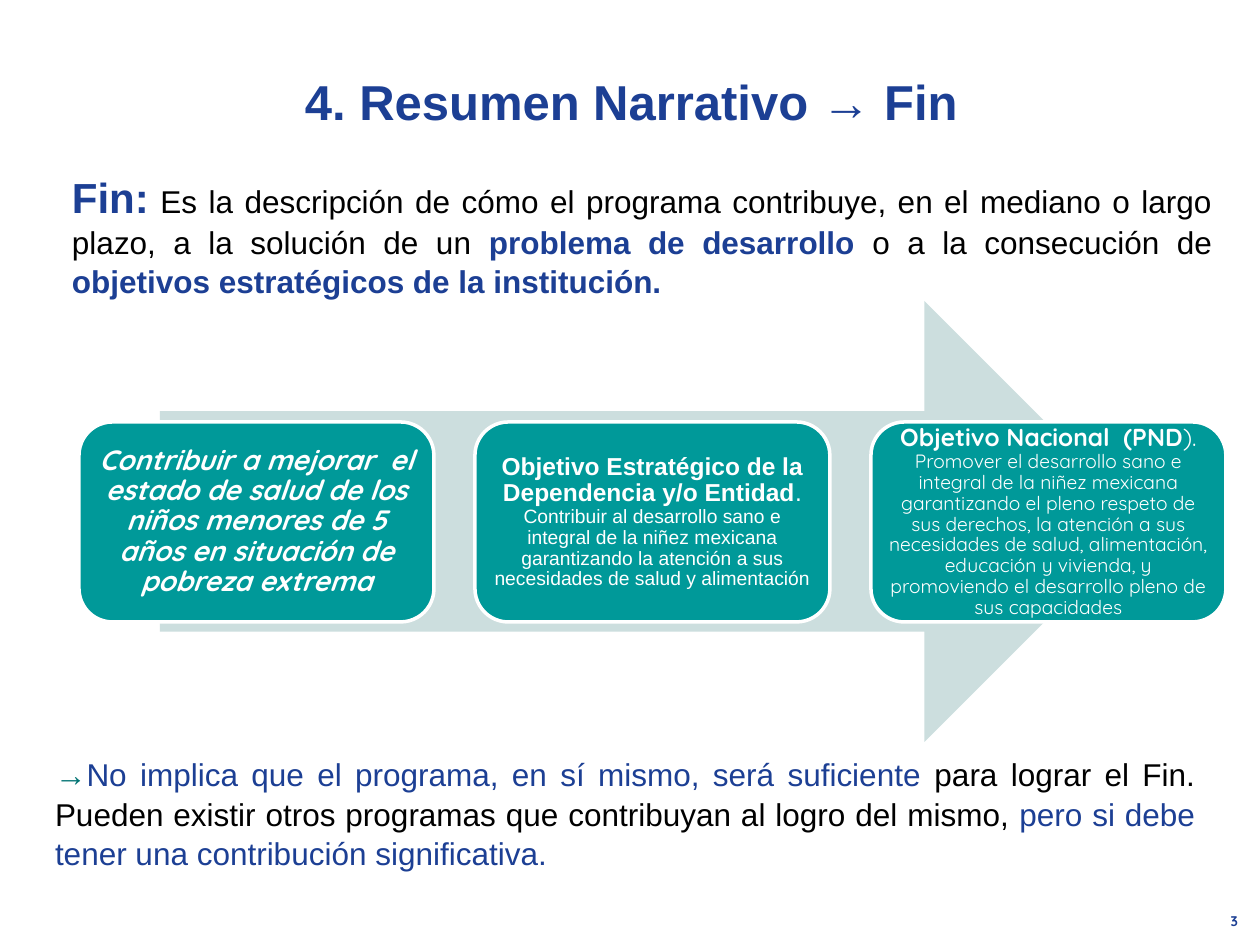
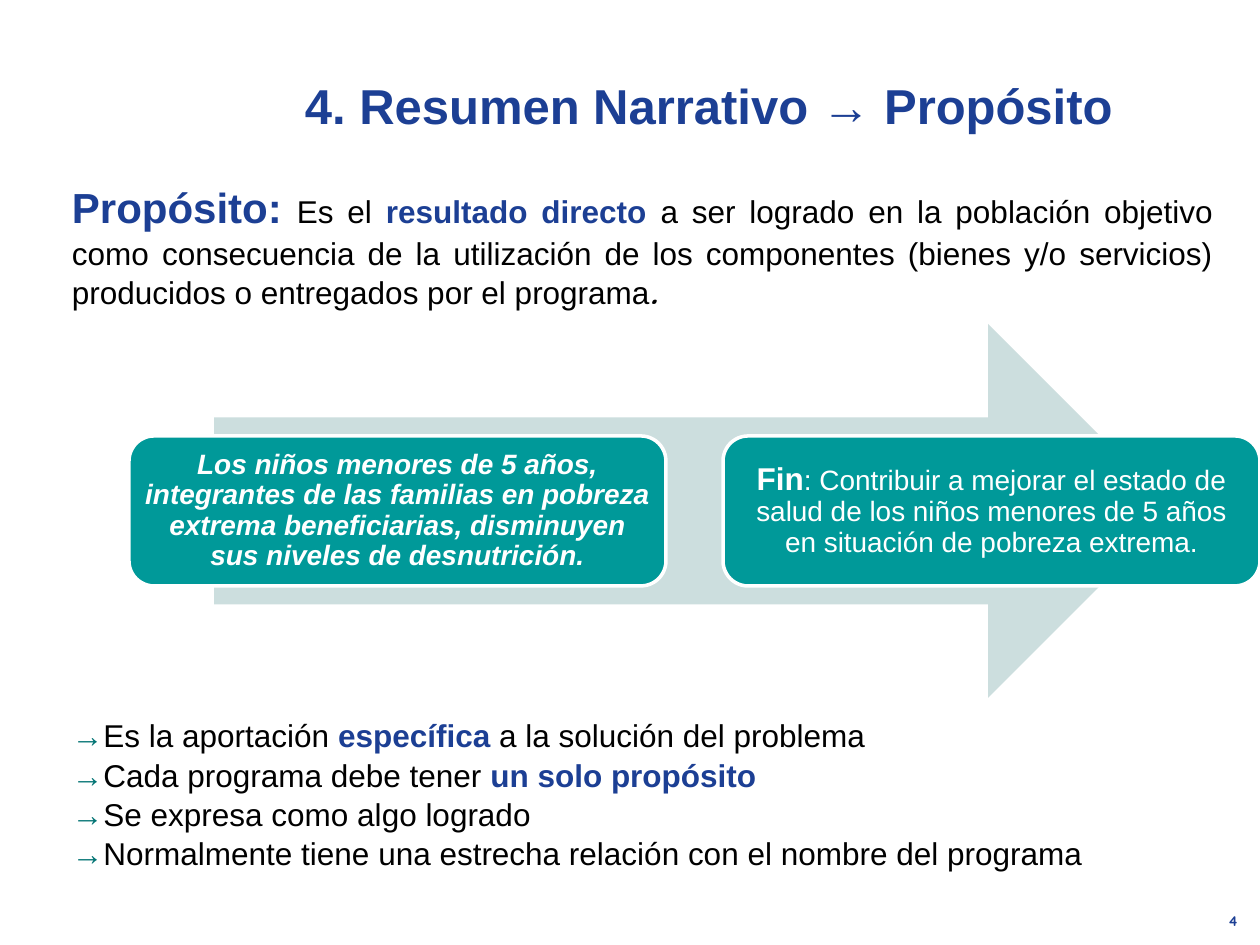
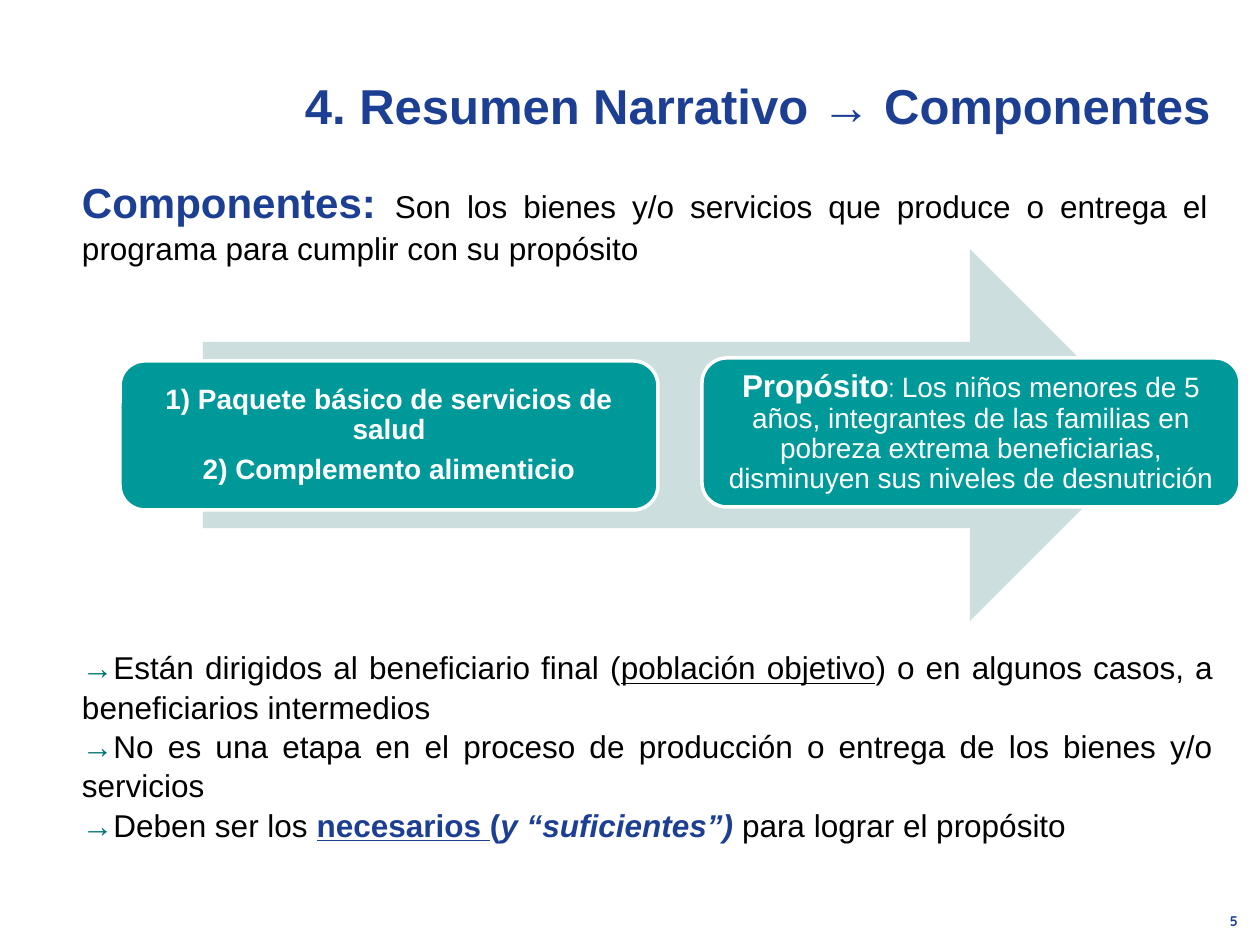
from lxml.etree import SubElement
from pptx import Presentation
from pptx.dml.color import RGBColor
from pptx.enum.shapes import MSO_SHAPE as Shape
from pptx.enum.text import MSO_ANCHOR as Anchor, MSO_AUTO_SIZE as AutoSize, PP_ALIGN as Align
from pptx.oxml.ns import qn
from pptx.util import Emu, Pt

PX = 914400 / 126


def px(*lengths):
    return [Emu(round(length * PX)) for length in lengths]


def write(frame, paragraphs, base, layout, margins):
    frame.word_wrap = True
    frame.auto_size = AutoSize.NONE
    frame.vertical_anchor = layout["anchor"]
    for side, margin in zip(("left", "top", "right", "bottom"), px(*margins)):
        setattr(frame, "margin_" + side, margin)
    for index, runs in enumerate(paragraphs):
        paragraph = frame.add_paragraph() if index else frame.paragraphs[0]
        properties = paragraph._p.get_or_add_pPr()
        properties.set("marL", "0")
        properties.set("indent", "0")
        SubElement(properties, qn("a:buNone"))
        for key, value in layout["paragraph"].items():
            setattr(paragraph, key, value)
        for text, changes in runs:
            style = {**base, **changes}
            if text == "\n":
                paragraph.add_line_break()
                SubElement(paragraph._p[-1], qn("a:rPr"), sz=str(style["size"] * 100))
                continue
            run = paragraph.add_run()
            run.text = text
            run.font.color.rgb = RGBColor.from_string(style["color"])
            run.font.size = Pt(style["size"])
            for key in ("name", "bold", "italic", "underline"):
                setattr(run.font, key, style[key])


BLUE, TEAL, GREEN, PALE = "1C3F94", "009999", "007373", "CCDEDE"
BLACK, WHITE = "000000", "FFFFFF"

PLAIN = {"name": "Arial", "size": 18, "color": BLACK, "bold": False, "italic": False, "underline": False}
HEADING = {**PLAIN, "size": 28, "color": BLUE, "bold": True}
CARD = {**PLAIN, "size": 16, "color": WHITE}
NUMBER = {**PLAIN, "name": "Quicksand", "size": 8, "color": BLUE, "bold": True}

TERM = {"size": 24, "color": BLUE, "bold": True}
KEY = {"color": BLUE, "bold": True}
TONE = {"color": BLUE}
BOLD = {"bold": True}
ROUND = {"name": "Quicksand"}
SMALL = {"size": 11}
LABEL = {"size": 14, "bold": True}
LEAD = {"size": 18, "bold": True}
BULLET = ("→", {"color": GREEN})

TITLE_LAYOUT = {"anchor": Anchor.TOP, "paragraph": {"alignment": Align.LEFT, "space_before": Pt(0)}}
PROSE_LAYOUT = {"anchor": Anchor.TOP, "paragraph": {
    "alignment": Align.JUSTIFY, "line_spacing": 1.04, "space_before": Pt(0)}}
CARD_LAYOUT = {"anchor": Anchor.MIDDLE, "paragraph": {
    "alignment": Align.CENTER, "line_spacing": 0.9, "space_before": Pt(0), "space_after": Pt(6)}}
NUMBER_LAYOUT = {"anchor": Anchor.TOP, "paragraph": {"alignment": Align.RIGHT}}

levels = [
    {
        "name": "Fin",
        "title_top": 60,
        "definition_box": (59, 159, 1166, 144),
        "definition": [
            ("Fin:", TERM),
            (" ", BOLD),
            ("Es la descripción de cómo el programa contribuye, en el mediano o largo plazo, "
             "a la solución de un ", {}),
            ("problema de desarrollo ", KEY),
            ("o a la consecución de ", {}),
            ("objetivos estratégicos de la institución.", KEY),
        ],
        "arrow_box": (160, 301, 985, 441),
        "card_size": (355, 200),
        "card_left": 79,
        "card_step": 396,
        "card_tops": (422, 422, 422),
        "cards": [
            [[("Contribuir a mejorar  el estado de salud de los niños menores de 5 años "
               "en situación de pobreza extrema", {**ROUND, "bold": True, "italic": True})]],
            [[("Objetivo Estratégico de la Dependencia y/o Entidad", LABEL),
              (". ", {"size": 14}),
              ("Contribuir al desarrollo sano e integral de la niñez mexicana garantizando "
               "la atención a sus necesidades de salud y alimentación", SMALL)]],
            [[("Objetivo Nacional  (PND", {**ROUND, **LABEL}),
              (").", {**ROUND, "size": 14}),
              ("\n", {"size": 14}),
              ("Promover el desarrollo sano e integral de la niñez mexicana garantizando el pleno "
               "respeto de sus derechos, la atención a sus necesidades de salud, alimentación, "
               "educación y vivienda, y promoviendo el desarrollo pleno de sus capacidades",
               {**ROUND, **SMALL})]],
        ],
        "notes_box": (42, 745, 1166, 127),
        "remarks": [
            [BULLET,
             ("No implica que el programa, en sí mismo, será suficiente ", TONE),
             ("para lograr el Fin. Pueden existir otros programas que contribuyan al logro "
              "del mismo, ", {}),
             ("pero si debe tener una contribución significativa.", TONE)],
        ],
    },
    {
        "name": "Propósito",
        "title_top": 64,
        "definition_box": (59, 170, 1167, 140),
        "definition": [
            ("Propósito:", TERM),
            (" ", {"size": 20}),
            ("Es el ", {}),
            ("resultado directo ", KEY),
            ("a ser logrado en la población objetivo como consecuencia de la utilización de los "
             "componentes (bienes y/o servicios) producidos o entregados por el programa", {}),
            (".", {**ROUND, "bold": True, "italic": True}),
        ],
        "arrow_box": (214, 324, 961, 374),
        "card_size": (537, 150),
        "card_left": 129,
        "card_step": 594,
        "card_tops": (436, 436),
        "cards": [
            [[("Los niños menores de 5 años, integrantes de las familias en pobreza extrema "
               "beneficiarias, disminuyen sus niveles de desnutrición.",
               {"bold": True, "italic": True})]],
            [[("Fin", LEAD),
              (": Contribuir a mejorar el estado de salud de los niños menores de 5 años "
               "en situación de pobreza extrema.", {})]],
        ],
        "notes_box": (59, 706, 1167, 165),
        "remarks": [
            [BULLET, ("Es la aportación ", {}), ("específica", KEY),
             (" a la solución del problema", {})],
            [BULLET, ("Cada programa debe tener ", {}), ("un solo propósito", KEY)],
            [BULLET, ("Se expresa como algo logrado", {})],
            [BULLET, ("Normalmente tiene una estrecha relación con el nombre del programa", {})],
        ],
    },
    {
        "name": "Componentes",
        "title_top": 64,
        "definition_box": (69, 165, 1152, 129),
        "definition": [
            ("Componentes: ", TERM),
            ("Son los bienes y/o servicios que produce o entrega el programa para cumplir "
             "con su propósito ", {}),
        ],
        "arrow_box": (203, 249, 953, 372),
        "card_size": (538, 149),
        "card_left": 120,
        "card_step": 582,
        "card_tops": (361, 358),
        "cards": [
            [[("1) Paquete básico de servicios de salud", BOLD)],
             [("2) Complemento alimenticio", BOLD)]],
            [[("Propósito", LEAD),
              (": ", ROUND),
              ("Los niños menores de 5 años, integrantes de las familias en pobreza extrema "
               "beneficiarias, disminuyen sus niveles de desnutrición", {})]],
        ],
        "notes_box": (69, 638, 1157, 242),
        "remarks": [
            [BULLET, ("Están dirigidos al beneficiario final (", {}),
             ("población objetivo", {"underline": True}),
             (") o en algunos casos, a beneficiarios intermedios", {})],
            [BULLET, ("No es una etapa en el proceso de producción o entrega de los bienes "
                      "y/o servicios", {})],
            [BULLET, ("Deben ser los ", {}),
             ("necesarios ", {**KEY, "underline": True}),
             ("(", KEY),
             ("y “suficientes”) ", {**KEY, "italic": True}),
             ("para lograr el propósito", {})],
        ],
    },
]

prs = Presentation()
prs.slide_width, prs.slide_height = px(1260, 945)

for number, level in enumerate(levels, start=3):
    slide = prs.slides.add_slide(prs.slide_layouts[1])
    shapes = slide.shapes

    heading, remarks = shapes.title, slide.placeholders[1]
    for holder, box in ((heading, (292, level["title_top"], 955, 72)), (remarks, level["notes_box"])):
        holder.left, holder.top, holder.width, holder.height = px(*box)
    write(heading.text_frame, [[("4. Resumen Narrativo → " + level["name"], {})]],
          HEADING, TITLE_LAYOUT, (13, 11, 13, 6))
    write(remarks.text_frame, level["remarks"], PLAIN, PROSE_LAYOUT, (13, 9, 13, 6))

    definition = shapes.add_textbox(*px(*level["definition_box"]))
    write(definition.text_frame, [level["definition"]], PLAIN, PROSE_LAYOUT, (13, 10, 13, 6))

    arrow = shapes.add_shape(Shape.RIGHT_ARROW, *px(*level["arrow_box"]))
    arrow.shadow.inherit = False
    arrow.fill.solid()
    arrow.fill.fore_color.rgb = RGBColor.from_string(PALE)
    arrow.line.fill.background()

    for index, (top, paragraphs) in enumerate(zip(level["card_tops"], level["cards"])):
        left = level["card_left"] + index * level["card_step"]
        card = shapes.add_shape(Shape.ROUNDED_RECTANGLE, *px(left, top, *level["card_size"]))
        card.shadow.inherit = False
        card.fill.solid()
        card.fill.fore_color.rgb = RGBColor.from_string(TEAL)
        card.line.color.rgb = RGBColor.from_string(WHITE)
        card.line.width = Pt(2)
        write(card.text_frame, paragraphs, CARD, CARD_LAYOUT, (8, 8, 8, 8))

    page = shapes.add_textbox(*px(1196, 907, 55, 29))
    write(page.text_frame, [[(str(number), {})]], NUMBER, NUMBER_LAYOUT, (13, 6, 13, 6))

prs.save("out.pptx")
